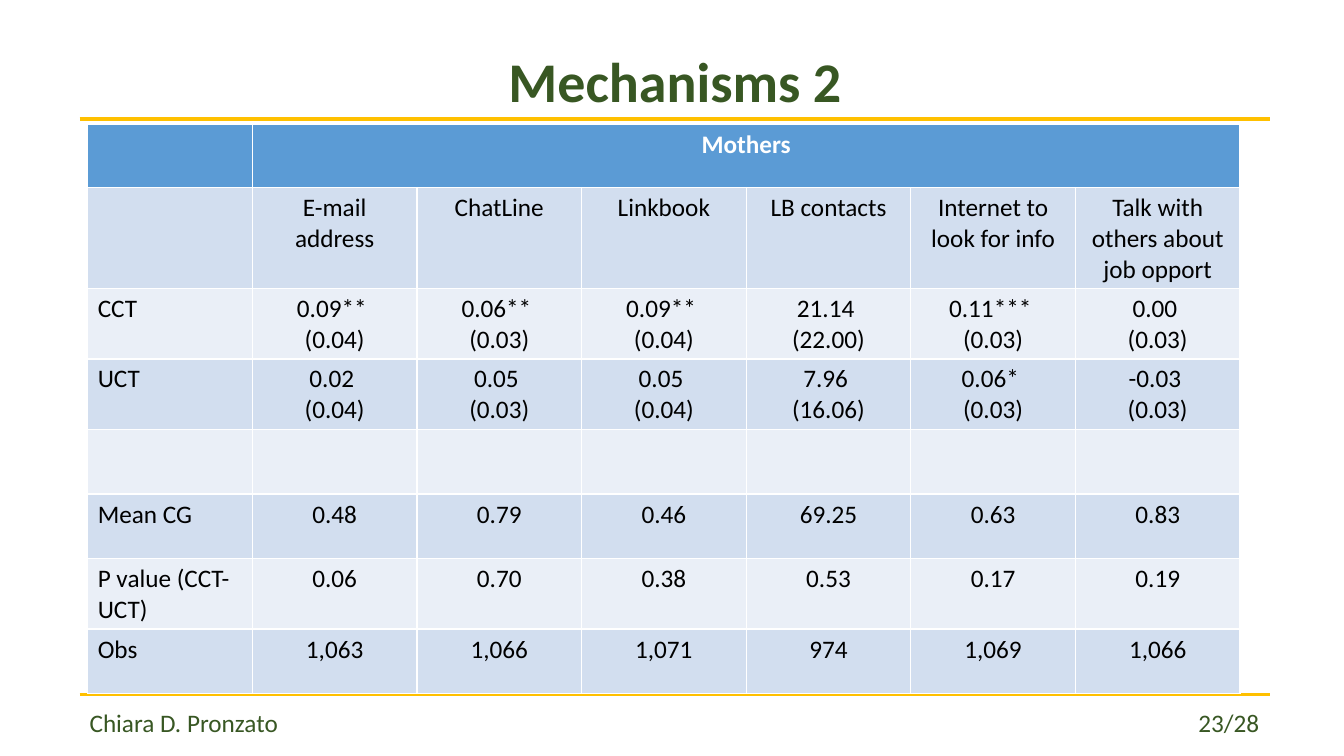
from lxml import etree
from pptx import Presentation
from pptx.dml.color import RGBColor as RGB
from pptx.enum.shapes import MSO_CONNECTOR as CONN
from pptx.enum.text import MSO_ANCHOR as ANCHOR, PP_ALIGN as ALIGN
from pptx.oxml.ns import qn
from pptx.util import Inches, Pt

COLORS = {"green": "385723", "gold": "FFC000", "header": "5B9BD5",
          "dark_band": "D2DEEF", "light_band": "EAEFF7",
          "white": "FFFFFF", "black": "000000"}
LEFT, WIDTH = 0.79, 11.81


def style_text(p, size, color, bold=False, align=ALIGN.LEFT):
    p.alignment = align
    formats = {"name": "Calibri", "size": Pt(size), "bold": bold}
    for name, value in formats.items():
        setattr(p.font, name, value)
    p.font.color.rgb = RGB.from_string(COLORS[color])


def add_text(top, height, text, anchor):
    """Add a full-width text box and return its frame."""
    sp = s.shapes.add_textbox(Inches(LEFT), Inches(top), Inches(WIDTH), Inches(height))
    tf = sp.text_frame
    tf.word_wrap = True
    tf.vertical_anchor = anchor
    tf.text = text
    return tf


prs = Presentation()
prs.slide_width, prs.slide_height = Inches(13.33), Inches(7.5)
s = prs.slides.add_slide(prs.slide_layouts[6])

# Title
tf = add_text(-0.2, 1.45, "Mechanisms 2", ANCHOR.BOTTOM)
tf.margin_bottom = Inches(0.11)
tf.paragraphs[0].line_spacing = 0.9
style_text(tf.paragraphs[0], 40, "green", bold=True, align=ALIGN.CENTER)

# Gold rules above and below the table
for y in (1.18, 6.89):
    rule = s.shapes.add_connector(CONN.STRAIGHT, Inches(LEFT), Inches(y),
                                  Inches(LEFT + WIDTH), Inches(y))
    rule.line.color.rgb = RGB.from_string(COLORS["gold"])
    rule.line.width = Pt(2.25)
    etree.SubElement(rule._element.spPr, qn("a:effectLst"))

# Footer: author on the left, page number at a right tab
tf = add_text(6.97, 0.4, "Chiara D. Pronzato\t23/28", ANCHOR.TOP)
p = tf.paragraphs[0]
style_text(p, 18, "green")
tabs = etree.SubElement(p._p.get_or_add_pPr(), qn("a:tabLst"))
p._p.pPr.insert(0, tabs)
etree.SubElement(tabs, qn("a:tab"), pos=str(Inches(11.6)), algn="r")

# Regression table: estimates have the standard error on a second line
rows = [
    (0.63, ["", "Mothers", "", "", "", "", ""]),
    (0.98, ["", "E-mail address", "ChatLine", "Linkbook", "LB contacts",
            "Internet to look for info", "Talk with others about job opport"]),
    (0.69, ["CCT", "0.09** \n(0.04)", "0.06** \n(0.03)", "0.09** \n(0.04)",
            "21.14 \n(22.00)", "0.11*** \n(0.03)", "0.00 \n(0.03)"]),
    (0.69, ["UCT", "0.02 \n(0.04)", "0.05 \n(0.03)", "0.05 \n(0.04)",
            "7.96 \n(16.06)", "0.06* \n(0.03)", "-0.03 \n(0.03)"]),
    (0.64, [""] * 7),
    (0.64, ["Mean CG", "0.48", "0.79", "0.46", "69.25", "0.63", "0.83"]),
    (0.69, ["P value (CCT-UCT)", "0.06", "0.70", "0.38", "0.53", "0.17", "0.19"]),
    (0.64, ["Obs", "1,063", "1,066", "1,071", "974", "1,069", "1,066"]),
]
table = s.shapes.add_table(len(rows), 7, Inches(0.87), Inches(1.23),
                           Inches(11.43), Inches(5.63)).table
table.cell(0, 1).merge(table.cell(0, 6))
for col in table.columns:
    col.width = Inches(11.43 / 7)

for i, (height, texts) in enumerate(rows):
    table.rows[i].height = Inches(height)
    band = "header" if i == 0 else "dark_band" if i % 2 else "light_band"
    for j, text in enumerate(texts):
        cell = table.cell(i, j)
        cell.fill.solid()
        cell.fill.fore_color.rgb = RGB.from_string(COLORS[band])
        if cell.is_spanned:
            continue
        cell.text = text
        for p in cell.text_frame.paragraphs:
            style_text(p, 18, "black" if i else "white", bold=i == 0,
                       align=ALIGN.CENTER if j else ALIGN.LEFT)

prs.save("out.pptx")
